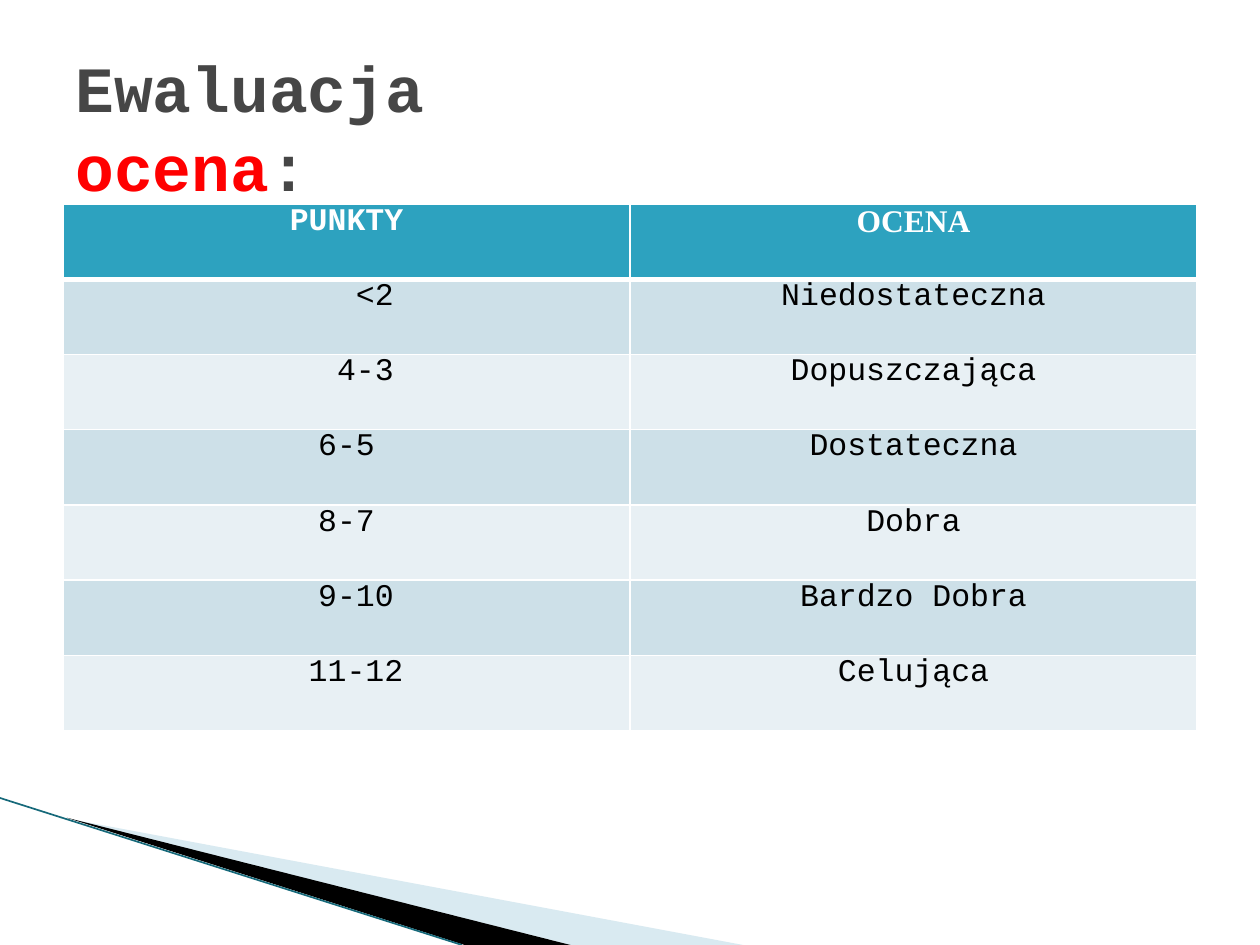
"""Build the grading scale slide with its title, table and corner wedges."""
from dataclasses import dataclass

from lxml.etree import SubElement as Sub
from pptx import Presentation
from pptx.dml.color import RGBColor as Rgb
from pptx.enum.shapes import MSO_CONNECTOR as Conn
from pptx.enum.text import MSO_ANCHOR as Anchor, PP_ALIGN as Align
from pptx.oxml.ns import qn
from pptx.util import Pt


@dataclass(frozen=True)
class Theme:
    dark: str = "464646"
    red: str = "FF0000"
    white: str = "FFFFFF"
    black: str = "000000"
    head: str = "2DA2BF"
    bands: tuple = ("CDE0E8", "E8F0F4")
    pale: str = "A0CBDC"
    edge: str = "16697A"
    mono: str = "Courier New"
    serif: str = "Times New Roman"
    title: float = 36.9
    body: float = 18
    char: float = 10.8


@dataclass(frozen=True)
class Grade:
    score: str
    name: str
    shift: int = 0


@dataclass(frozen=True)
class Wedge:
    points: tuple
    color: str
    alpha: int = 100


T = Theme()
GRADES = (
    Grade("<2", "Niedostateczna", 3),
    Grade("4-3", "Dopuszczająca", 2),
    Grade("6-5", "Dostateczna"),
    Grade("8-7", "Dobra"),
    Grade("9-10", "Bardzo Dobra", 1),
    Grade("11-12", "Celująca", 1),
)
WEDGES = (
    Wedge(((39.6, 468), (424.6, 540), (326, 540)), T.pale, 40),
    Wedge(((38.2, 467.3), (326, 540), (265.5, 540)), T.black),
)


def add_run(para, text: str, size: float, color: str, bold: bool, face: str = T.mono) -> None:
    run = para.add_run()
    run.text = text
    font = run.font
    font.name, font.size, font.bold = face, Pt(size), bold
    font.color.rgb = Rgb.from_string(color)


def add_wedge(slide, wedge: Wedge) -> None:
    first, *rest = [(Pt(x), Pt(y)) for x, y in wedge.points]
    form = slide.shapes.build_freeform(*first)
    form.add_line_segments(rest, close=True)
    shape = form.convert_to_shape()
    shape.shadow.inherit = False
    shape.line.fill.background()
    shape.fill.solid()
    shape.fill.fore_color.rgb = Rgb.from_string(wedge.color)
    if wedge.alpha < 100:
        tint = shape.fill._xPr.find(f"{qn('a:solidFill')}/{qn('a:srgbClr')}")
        Sub(tint, qn("a:alpha")).set("val", str(wedge.alpha * 1000))


def add_edge(slide) -> None:
    line = slide.shapes.add_connector(Conn.STRAIGHT, Pt(0), Pt(456), Pt(264), Pt(540))
    line.line.color.rgb = Rgb.from_string(T.edge)
    line.line.width = Pt(0.95)
    Sub(line._element.spPr, qn("a:effectLst"))


def add_title(slide) -> None:
    box = slide.shapes.add_textbox(Pt(36), Pt(21.6), Pt(648), Pt(90))
    frame = box.text_frame
    frame.word_wrap = True
    frame.vertical_anchor = Anchor.TOP
    frame.margin_top = Pt(5.2)
    para = frame.paragraphs[0]
    para.line_spacing = Pt(45)
    add_run(para, "Ewaluacja", T.title, T.dark, True)
    para.add_line_break()
    add_run(para, "ocena", T.title, T.red, True)
    add_run(para, ":", T.title, T.dark, True)


def set_border(cell, side: str, width: float) -> None:
    line = Sub(cell._tc.get_or_add_tcPr(), qn(f"a:ln{side}"))
    line.set("w", str(Pt(width)))
    fill = Sub(line, qn("a:solidFill"))
    Sub(fill, qn("a:srgbClr")).set("val", T.white)


def fill_cell(cell, row: int, text: str, shift: int, face: str) -> None:
    head = row == 0
    for side in "LRTB":
        thick = (row, side) in ((0, "B"), (1, "T"))
        set_border(cell, side, 3 if thick else 1)
    cell.fill.solid()
    cell.fill.fore_color.rgb = Rgb.from_string(T.head if head else T.bands[(row - 1) % 2])
    cell.margin_left = cell.margin_right = Pt(5)
    cell.margin_top = cell.margin_bottom = Pt(0)
    para = cell.text_frame.paragraphs[0]
    para.alignment = Align.CENTER
    if shift:
        para._p.get_or_add_pPr().set("marL", str(Pt(shift * T.char)))
    add_run(para, text, T.body, T.white if head else T.black, head, face)


def add_grades(slide) -> None:
    rows = (Grade("PUNKTY", "OCENA"), *GRADES)
    size = len(rows)
    table = slide.shapes.add_table(size, 2, Pt(36), Pt(116.6), Pt(648), Pt(43 * size)).table
    table.horz_banding = False
    for row, grade in enumerate(rows):
        fill_cell(table.cell(row, 0), row, grade.score, grade.shift, T.mono)
        fill_cell(table.cell(row, 1), row, grade.name, 0, T.mono if row else T.serif)


def main() -> None:
    deck = Presentation()
    deck.slide_width, deck.slide_height = Pt(720), Pt(540)
    slide = deck.slides.add_slide(deck.slide_layouts[6])
    for wedge in WEDGES:
        add_wedge(slide, wedge)
    add_edge(slide)
    add_grades(slide)
    add_title(slide)
    deck.save("out.pptx")


if __name__ == "__main__":
    main()
